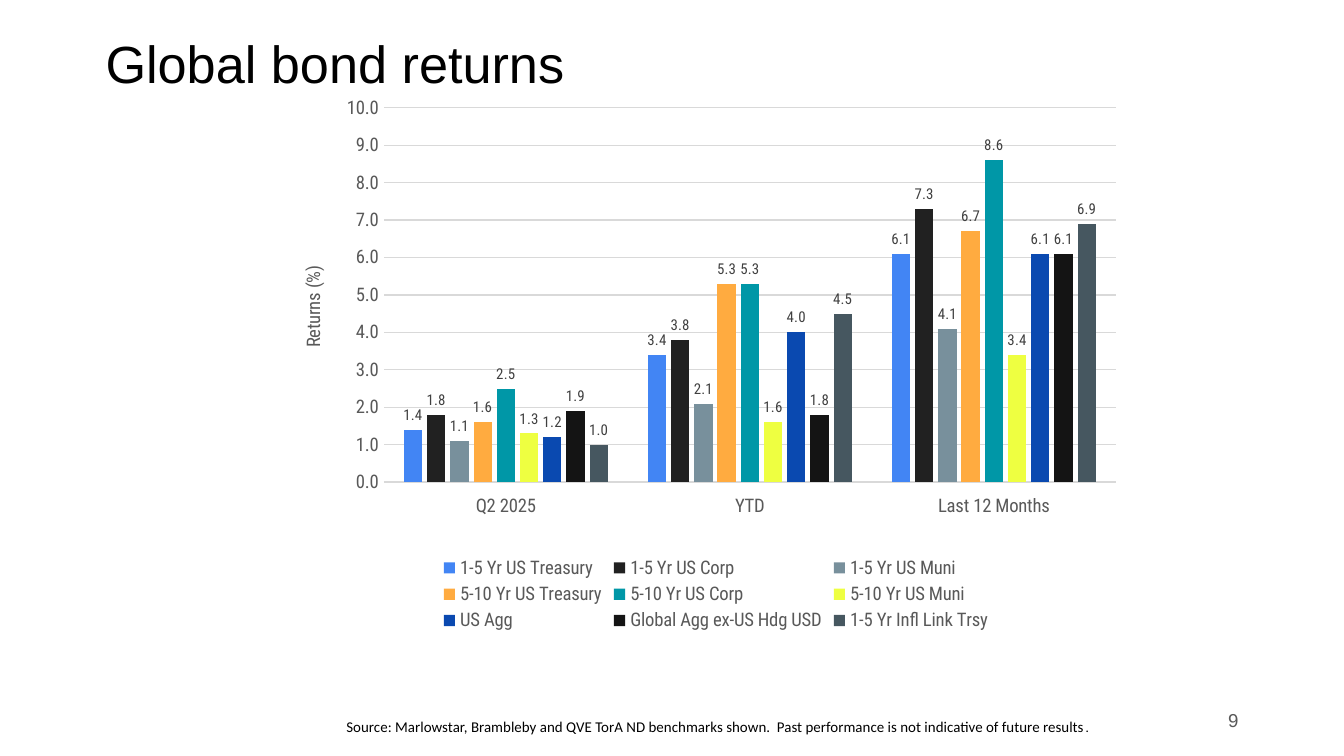
from pptx import Presentation
from pptx.chart.data import CategoryChartData as ChartData
from pptx.dml.color import RGBColor as RGB
from pptx.enum.chart import XL_CHART_TYPE as Kind, XL_LABEL_POSITION as Spot
from pptx.enum.chart import XL_LEGEND_POSITION as Side, XL_TICK_LABEL_POSITION as Label
from pptx.enum.chart import XL_TICK_MARK as Tick
from pptx.enum.text import MSO_ANCHOR as Anchor, PP_ALIGN as Align
from pptx.oxml import parse_xml
from pptx.oxml.ns import nsdecls, qn
from pptx.util import Pt

FONT = "Roboto Condensed"
GREY = "595959"
RULE = "D9D9D9"
FORM = "#,##0.0"
TERMS = ["Q2 2025", "YTD", "Last 12 Months"]
BONDS = [
    ("1-5 Yr US Treasury", "4285F4", (1.4, 3.4, 6.1)),
    ("1-5 Yr US Corp", "212121", (1.8, 3.8, 7.3)),
    ("1-5 Yr US Muni", "78909C", (1.1, 2.1, 4.1)),
    ("5-10 Yr US Treasury", "FFAB40", (1.6, 5.3, 6.7)),
    ("5-10 Yr US Corp", "0097A7", (2.5, 5.3, 8.6)),
    ("5-10 Yr US Muni", "EEFF41", (1.3, 1.6, 3.4)),
    ("US Agg", "0A49B0", (1.2, 4.0, 6.1)),
    ("Global Agg ex-US Hdg USD", "141414", (1.9, 1.8, 6.1)),
    ("1-5 Yr Infl Link Trsy", "465760", (1.0, 4.5, 6.9)),
]


def color(code):
    return RGB.from_string(code)


def style(font, size, code=GREY, name=FONT):
    font.size = Pt(size)
    font.name = name
    font.bold = False
    font.color.rgb = color(code)


def write(para, text, size, code="000000", name="Arial"):
    run = para.add_run()
    run.text = text
    style(run.font, size, code, name)


def frame(slide, box, anchor=Anchor.MIDDLE, align=Align.LEFT):
    body = slide.shapes.add_textbox(*map(Pt, box)).text_frame
    body.word_wrap = True
    body.vertical_anchor = anchor
    para = body.paragraphs[0]
    para.alignment = align
    return para


def head(slide, box):
    para = frame(slide, box)
    para.line_spacing = 0.9
    write(para, "Global bond returns", 28)


def source(slide, box):
    para = frame(slide, box, Anchor.TOP)
    write(para, "Source: Marlowstar, Brambleby and QVE TorA ND benchmarks shown.  "
          "Past performance is not indicative of future results", 8, name="Calibri")
    write(para, ".", 8, name=FONT)


def number(slide, box):
    write(frame(slide, box, align=Align.RIGHT), "9", 10, GREY)


def place(chart, x, y, w, h):
    area = chart.element.find(".//" + qn("c:plotArea"))
    for old in area.findall(qn("c:layout")):
        area.remove(old)
    parts = "".join(f'<c:{tag} val="{val}"/>' for tag, val in (
        ("layoutTarget", "inner"), ("xMode", "edge"), ("yMode", "edge"),
        ("x", x), ("y", y), ("w", w), ("h", h)))
    area.insert(0, parse_xml(
        f'<c:layout {nsdecls("c")}><c:manualLayout>{parts}</c:manualLayout></c:layout>'))


def axes(chart):
    cat, val = chart.category_axis, chart.value_axis
    for axis in (cat, val):
        axis.major_tick_mark = axis.minor_tick_mark = Tick.NONE
        style(axis.tick_labels.font, 10)
    cat.tick_label_position = Label.LOW
    val.minimum_scale, val.maximum_scale, val.major_unit = 0, 10, 1
    val.tick_labels.number_format = FORM
    val.tick_labels.number_format_is_linked = False
    val.format.line.fill.background()
    val.has_major_gridlines = True
    for line in (cat.format.line, val.major_gridlines.format.line):
        line.color.rgb = color(RULE)
        line.width = Pt(0.75)
    write(val.axis_title.text_frame.paragraphs[0], "Returns (%)", 10, GREY, FONT)


def bars(chart):
    plot = chart.plots[0]
    plot.gap_width = 219
    plot.overlap = -27
    plot.vary_by_categories = False
    for row, (name, code, vals) in zip(plot.series, BONDS):
        row.format.fill.solid()
        row.format.fill.fore_color.rgb = color(code)
        row.invert_if_negative = False
        tags = row.data_labels
        tags.show_value = True
        tags.position = Spot.OUTSIDE_END
        tags.number_format = FORM
        tags.number_format_is_linked = False
        style(tags.font, 8, "404040")


def graph(slide, box):
    data = ChartData(number_format=FORM)
    data.categories = TERMS
    for name, code, vals in BONDS:
        data.add_series(name, vals)
    chart = slide.shapes.add_chart(Kind.COLUMN_CLUSTERED, *map(Pt, box), data).chart
    style(chart.font, 10, "000000", "Arial")
    chart.has_title = False
    chart.has_legend = True
    chart.legend.position = Side.BOTTOM
    chart.legend.include_in_layout = False
    style(chart.legend.font, 10)
    axes(chart)
    bars(chart)
    place(chart, 0.11, 0.04, 0.86, 0.68)


def main():
    deck = Presentation()
    deck.slide_width, deck.slide_height = Pt(720), Pt(405)
    slide = deck.slides.add_slide(deck.slide_layouts[6])
    head(slide, (49.5, -3.6, 621, 78.5))
    number(slide, (508.5, 375, 162, 21.6))
    source(slide, (178.5, 381, 640, 17))
    graph(slide, (155.5, 46, 456, 295))
    deck.save("out.pptx")


if __name__ == "__main__":
    main()
